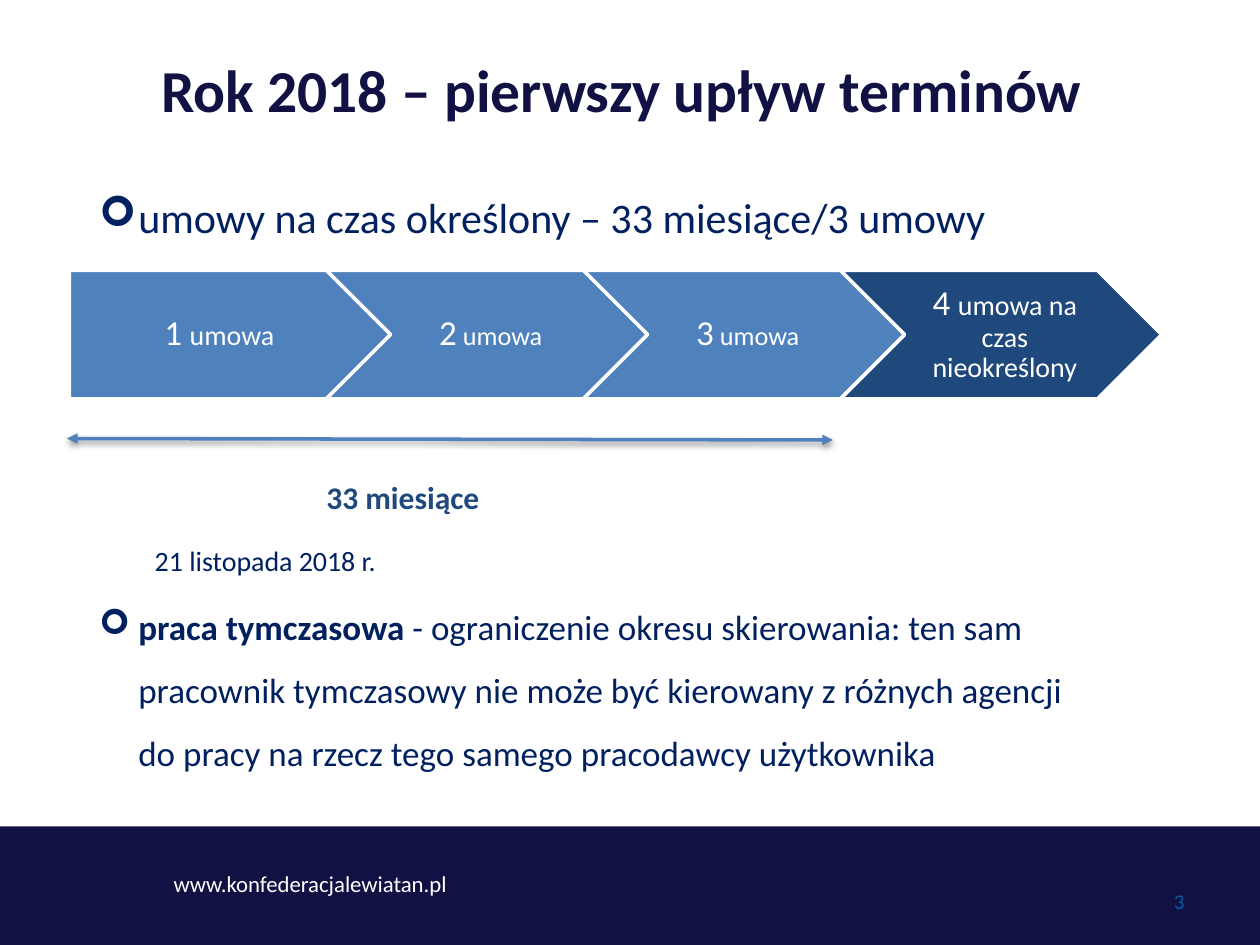
from lxml.etree import SubElement
from pptx import Presentation
from pptx.dml.color import RGBColor
from pptx.enum.shapes import MSO_CONNECTOR, MSO_SHAPE
from pptx.enum.text import MSO_ANCHOR, PP_ALIGN
from pptx.oxml import parse_xml
from pptx.oxml.ns import nsdecls, qn
from pptx.util import Cm, Pt

HUE = {"navy": "111143", "ink": "002060", "blue": "4F81BD",
       "deep": "1F497D", "white": "FFFFFF", "page": "005EA4"}


def tint(name):
    return RGBColor.from_string(HUE[name])


def add_run(par, text, size, hue, bold=False):
    run = par.add_run()
    run.text = text
    font = run.font
    font.name, font.size, font.bold = "Calibri", Pt(size), bold
    font.color.rgb = tint(hue)


def add_box(slide, box):
    frame = slide.shapes.add_textbox(*map(Cm, box)).text_frame
    frame.word_wrap = True
    return frame


def add_label(slide, box, text, size, hue, bold=False):
    frame = add_box(slide, box)
    add_run(frame.paragraphs[0], text, size, hue, bold)
    return frame


def add_plate(slide, kind, box, fill):
    shape = slide.shapes.add_shape(kind, *map(Cm, box))
    shape.shadow.inherit = False
    shape.fill.solid()
    shape.fill.fore_color.rgb = tint(fill)
    shape.line.fill.background()
    return shape


def indent(par, left, mark=None):
    props = par._p.get_or_add_pPr()
    props.set("marL", str(Cm(left)))
    if mark:
        props.set("indent", str(-Cm(left)))
        SubElement(props, qn("a:buFont"), typeface="Wingdings")
        SubElement(props, qn("a:buChar"), char=mark)


def add_body(slide, box):
    frame = add_box(slide, box)
    # Left indent, bullet, space before, runs
    rows = [
        (0.79, "➢", 0, [("umowy na czas określony – 33 miesiące/3 umowy", 24, False)]),
        (1.12, None, 163, [("21 listopada 2018 r.", 16, False)]),
        (0.79, "➢", 4, [
            ("praca tymczasowa", 20, True),
            (" - ograniczenie okresu skierowania: ten sam pracownik tymczasowy "
             "nie może być kierowany z różnych agencji do pracy na rzecz tego "
             "samego pracodawcy użytkownika", 20, False)]),
    ]
    for i, (left, mark, gap, runs) in enumerate(rows):
        par = frame.add_paragraph() if i else frame.paragraphs[0]
        par.line_spacing = 1.5
        par.space_before = Pt(gap)
        indent(par, left, mark)
        for text, size, bold in runs:
            add_run(par, text, size, "ink", bold)


def add_steps(slide, box):
    left, top, wide, high = box
    steps = [
        [("1", 20), (" ", 19), ("umowa", 16)],
        [("2", 20), (" umowa", 15)],
        [("3", 20), (" umowa", 15)],
        [("4", 20), (" ", 19), ("umowa na czas nieokreślony", 16)],
    ]
    # Each step overlaps the next by a fifth of its width
    size = wide / (1 + 0.8 * (len(steps) - 1))
    for i, runs in enumerate(steps):
        kind = MSO_SHAPE.CHEVRON if i else MSO_SHAPE.PENTAGON
        last = i == len(steps) - 1
        shape = add_plate(slide, kind, (left + 0.8 * size * i, top, size, high),
                          "deep" if last else "blue")
        shape.line.color.rgb = tint("white")
        shape.line.width = Pt(2)
        frame = shape.text_frame
        frame.word_wrap = True
        frame.vertical_anchor = MSO_ANCHOR.MIDDLE
        frame.margin_left = Cm(0.23 if i else 0.3)
        frame.margin_right = Cm(0.08)
        frame.margin_top = frame.margin_bottom = Cm(0.15)
        par = frame.paragraphs[0]
        par.alignment = PP_ALIGN.CENTER
        par.line_spacing = 0.9
        for text, points in runs:
            add_run(par, text, points, "white")


def add_span(slide, box):
    left, top, wide, high = box
    # Two-headed arrow with a soft shadow
    arrow = slide.shapes.add_connector(
        MSO_CONNECTOR.STRAIGHT, Cm(left), Cm(top), Cm(left + wide), Cm(top + 0.03))
    arrow.line.color.rgb = tint("blue")
    arrow.line.width = Pt(2)
    line = arrow.line._get_or_add_ln()
    for end in ("a:headEnd", "a:tailEnd"):
        SubElement(line, qn(end), type="triangle")
    arrow._element.spPr.append(parse_xml(
        f'<a:effectLst {nsdecls("a")}><a:outerShdw blurRad="40000" dist="20000" '
        'dir="5400000" rotWithShape="0"><a:srgbClr val="000000">'
        '<a:alpha val="38000"/></a:srgbClr></a:outerShdw></a:effectLst>'))
    # Caption under the arrow
    add_label(slide, (left + 4.98, top + high - 1.02, 4.9, 1.02),
              "33 miesiące", 18, "deep", True)


def add_footer(slide, box):
    left, top, wide, high = box
    add_plate(slide, MSO_SHAPE.RECTANGLE, box, "navy")
    add_label(slide, (left + 3.25, top + 0.74, 8.41, 1.37),
              "www.konfederacjalewiatan.pl", 13, "white")
    page = add_label(slide, (left + wide - 7.19, top + 0.99, 5.92, 1.02),
                     "3", 12, "page")
    page.vertical_anchor = MSO_ANCHOR.MIDDLE
    page.paragraphs[0].alignment = PP_ALIGN.RIGHT


def main():
    deck = Presentation()
    deck.slide_width, deck.slide_height = Cm(25.4), Cm(19.05)
    slide = deck.slides.add_slide(deck.slide_layouts[6])
    add_footer(slide, (0, 16.66, 25.4, 2.39))
    add_label(slide, (3, 0.94, 21, 2.95),
              "Rok 2018 – pierwszy upływ terminów", 34, "navy", True)
    add_body(slide, (1.75, 3.23, 20.42, 10.46))
    add_steps(slide, (1.4, 5.45, 22.02, 2.59))
    add_span(slide, (1.35, 8.84, 15.44, 1.7))
    deck.save("out.pptx")


if __name__ == "__main__":
    main()
